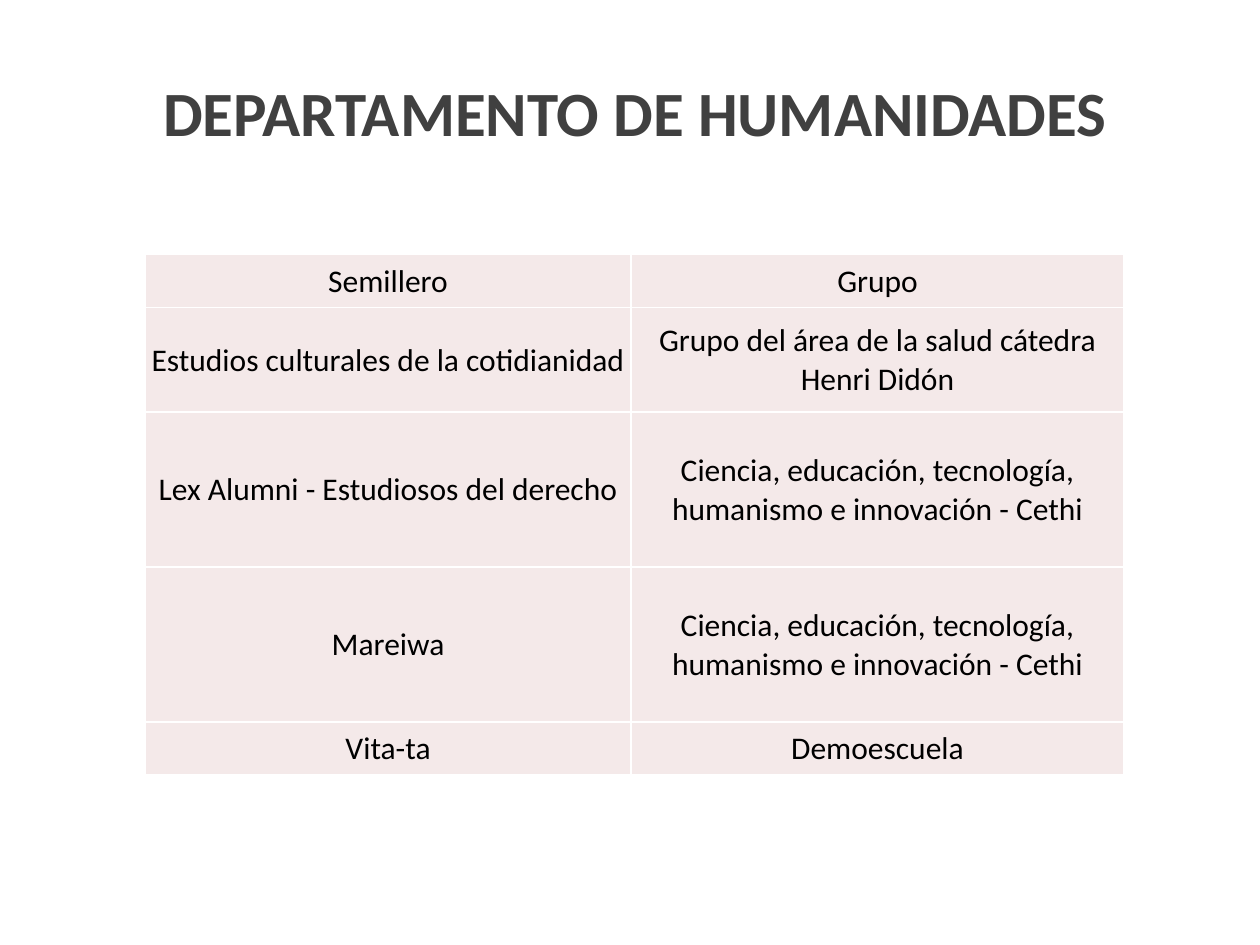
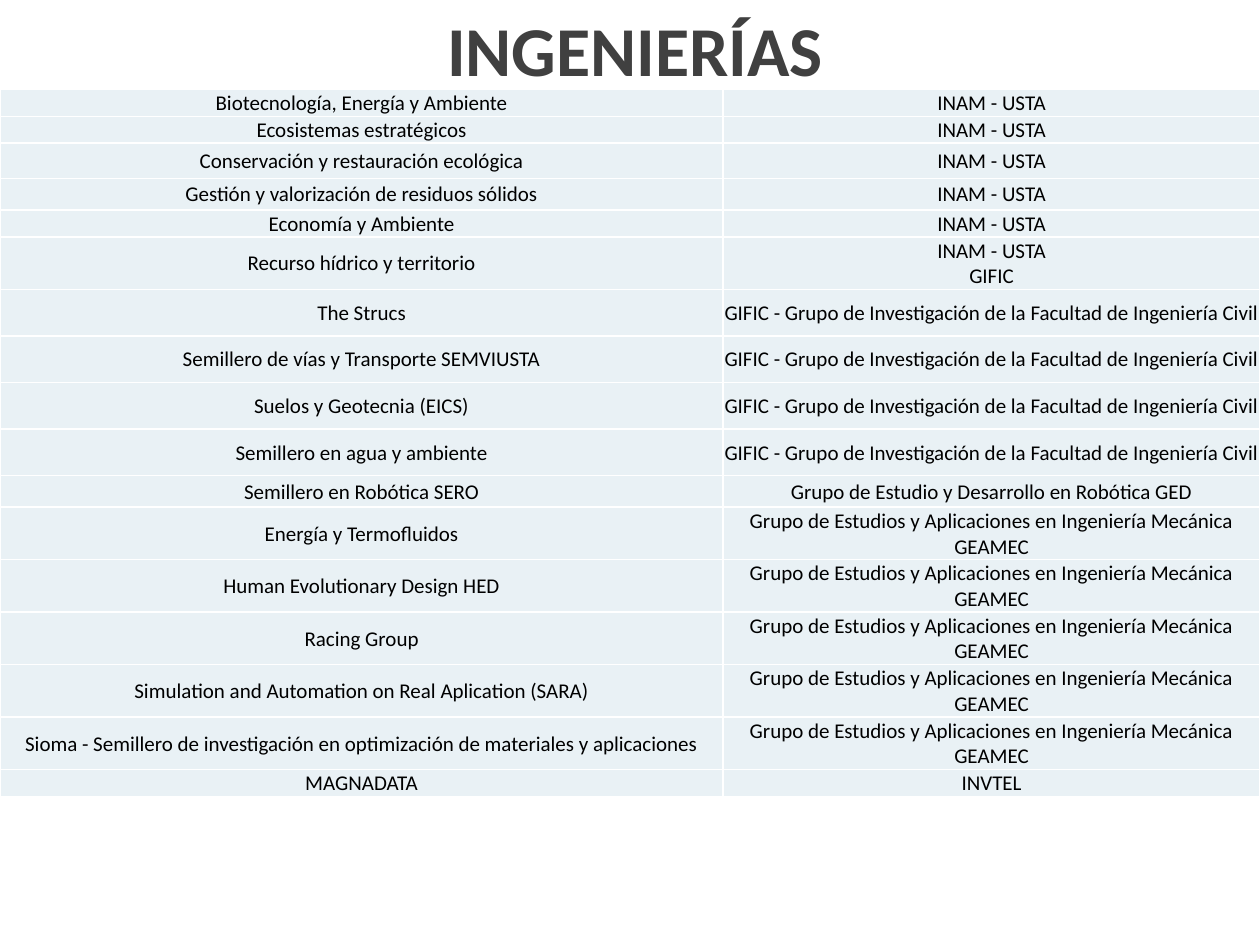
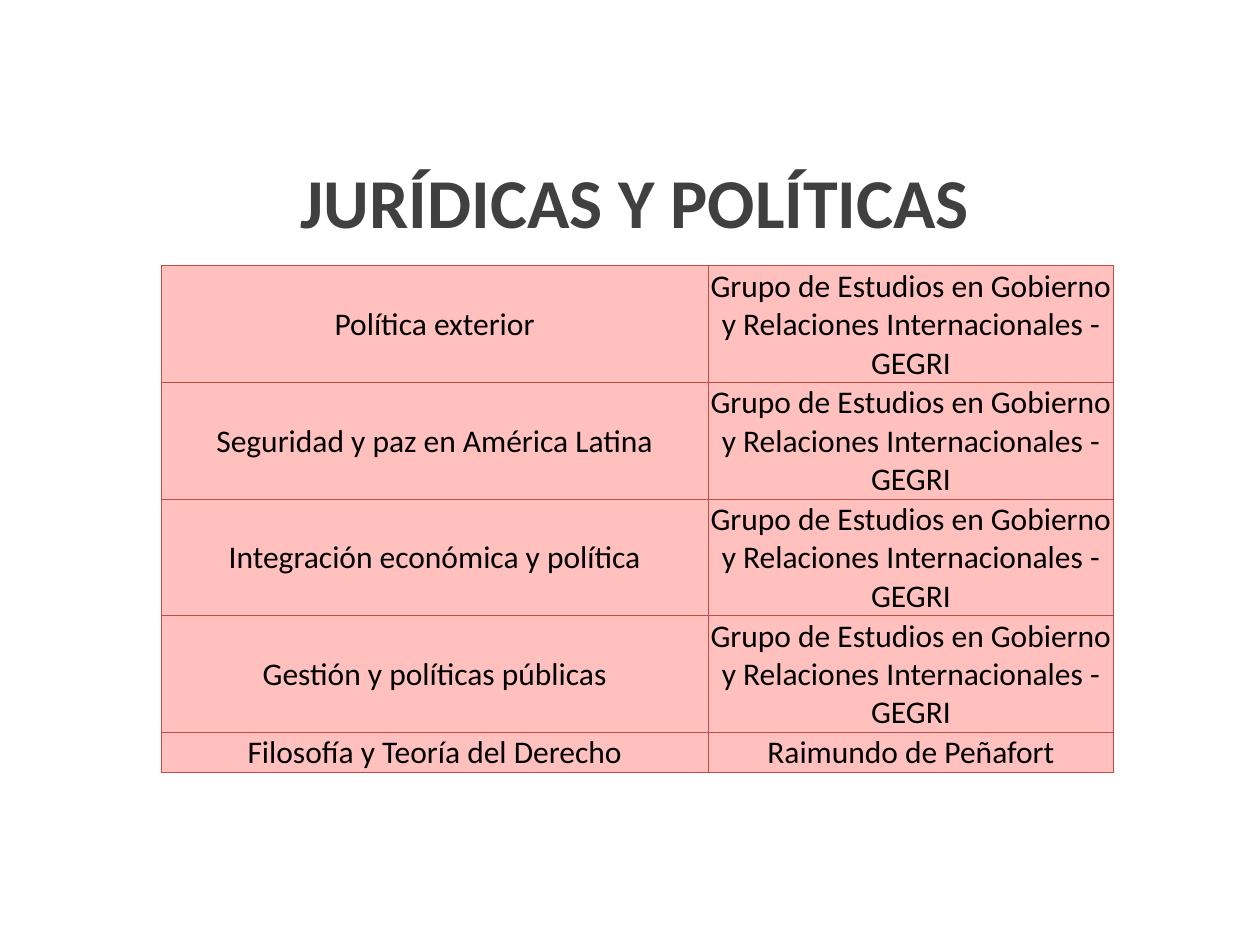
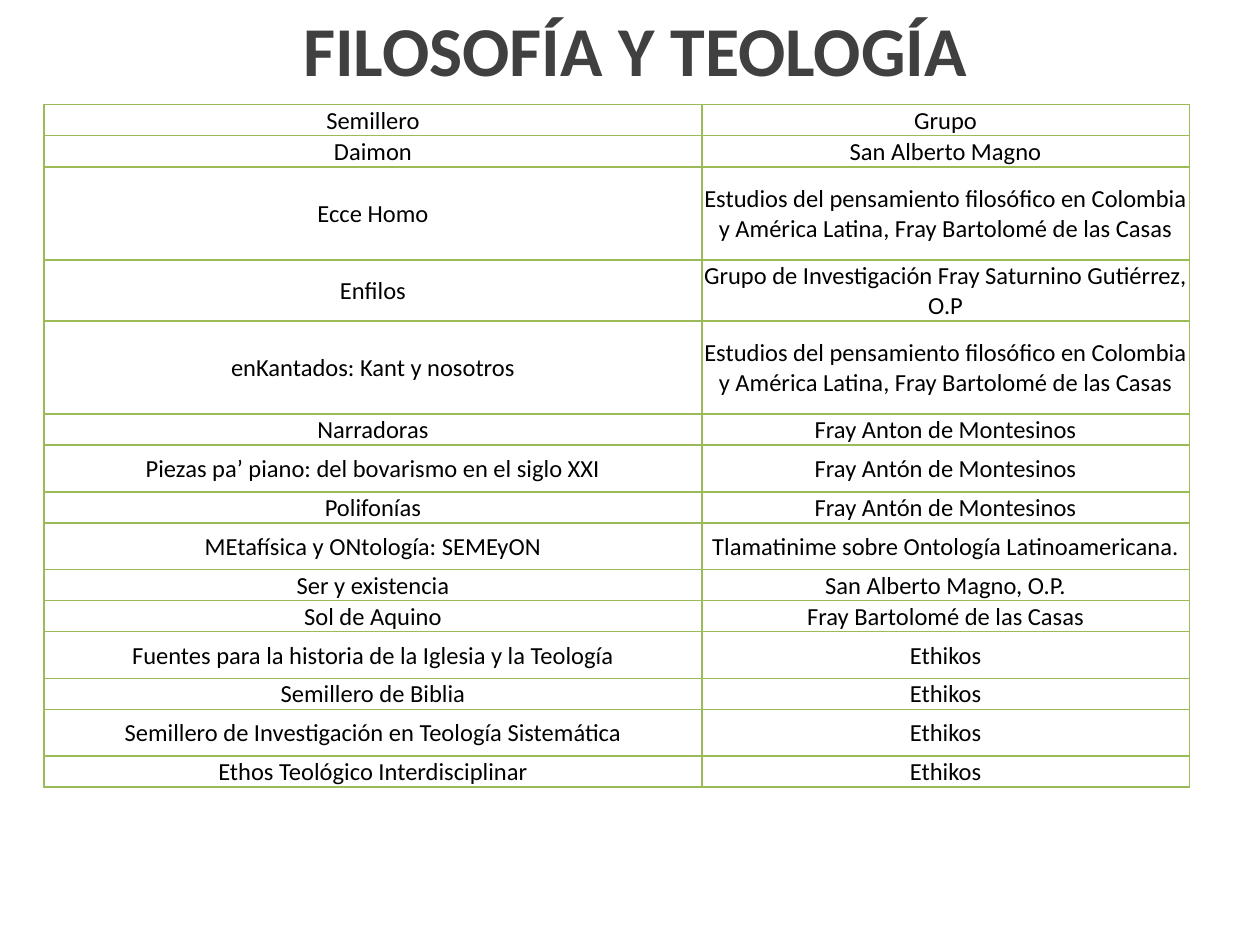
from dataclasses import dataclass
from typing import NamedTuple, Optional

from lxml.etree import SubElement
from pptx import Presentation
from pptx.dml.color import RGBColor
from pptx.enum.text import MSO_ANCHOR as Anchor, MSO_AUTO_SIZE as AutoSize, PP_ALIGN as Align
from pptx.oxml.ns import qn
from pptx.util import Inches, Pt

SLIDE_WIDTH, SLIDE_HEIGHT = Inches(10), Inches(7.5)
GRID_COLUMNS = 100  # square modules; the slide is 100 wide and 75 high
TITLE_ONLY = 5


@dataclass(frozen=True)
class Theme:
    font: str = "Calibri"
    title_color: str = "404040"
    text_color: str = "000000"
    title_size: int = 40
    cell_inset: float = 0.1
    title_left: float = 7.9
    title_width: float = 85
    title_height: float = 14.9


THEME = Theme()


class Row(NamedTuple):
    semillero: str
    grupo: str
    height: float


@dataclass(frozen=True)
class Department:
    """One slide: a title over a table, with lengths in grid modules."""
    title: str
    title_top: float
    left: float
    top: float
    columns: tuple[float, float]
    rows: list[Row]
    text_size: int
    border: str
    border_width: float = 1
    fill: Optional[str] = None
    title_size: int = THEME.title_size


CETHI = "Ciencia, educación, tecnología, humanismo e innovación - Cethi"
INAM = "INAM - USTA"
GIFIC = "GIFIC - Grupo de Investigación de la Facultad de Ingeniería Civil"
GEAMEC = "Grupo de Estudios y Aplicaciones en Ingeniería Mecánica GEAMEC"
GEGRI = "Grupo de Estudios en Gobierno y Relaciones Internacionales - GEGRI"
PENSAMIENTO = ("Estudios del pensamiento filosófico en Colombia y América Latina, "
               "Fray Bartolomé de las Casas")
MONTESINOS = "Fray Antón de Montesinos"
ETHIKOS = "Ethikos"

DEPARTMENTS = [
    Department(
        "DEPARTAMENTO DE HUMANIDADES", 5.3, 11.5, 20.2, (38.6, 39.1),
        [
            Row("Semillero", "Grupo", 4.2),
            Row("Estudios culturales de la cotidianidad",
                "Grupo del área de la salud cátedra Henri Didón", 8.3),
            Row("Lex Alumni - Estudiosos del derecho", CETHI, 12.3),
            Row("Mareiwa", CETHI, 12.3),
            Row("Vita-ta", "Demoescuela", 4.2),
        ],
        text_size=18, border="FFFFFF", fill="F4E9E9", title_size=36),
    Department(
        "INGENIERÍAS", 0, 0, 7.1, (57.4, 42.6),
        [
            Row("Biotecnología, Energía y Ambiente", INAM, 1.9),
            Row("Ecosistemas estratégicos", INAM, 1.9),
            Row("Conservación y restauración ecológica", INAM, 2.8),
            Row("Gestión y valorización de residuos sólidos", INAM, 2.5),
            Row("Economía y Ambiente", INAM, 1.9),
            Row("Recurso hídrico y territorio", f"{INAM}\nGIFIC", 3.6),
            Row("The Strucs", GIFIC, 3.7),
            Row("Semillero de vías y Transporte SEMVIUSTA", GIFIC, 3.7),
            Row("Suelos y Geotecnia (EICS)", GIFIC, 3.7),
            Row("Semillero en agua y ambiente", GIFIC, 3.7),
            Row("Semillero en Robótica SERO",
                "Grupo de Estudio y Desarrollo en Robótica GED", 2.5),
            Row("Energía y Termofluidos", GEAMEC, 3.7),
            Row("Human Evolutionary Design HED", GEAMEC, 3.7),
            Row("Racing Group", GEAMEC, 3.7),
            Row("Simulation and Automation on Real Aplication (SARA)", GEAMEC, 3.7),
            Row("Sioma - Semillero de investigación en optimización de materiales "
                "y aplicaciones", GEAMEC, 3.7),
            Row("MAGNADATA", "INVTEL", 1.9),
        ],
        text_size=12, border="FFFFFF", fill="E9F1F5"),
    Department(
        "JURÍDICAS Y POLÍTICAS", 12.1, 12.8, 21.1, (43.4, 32.2),
        [
            Row("Política exterior", GEGRI, 8.6),
            Row("Seguridad y paz en América Latina", GEGRI, 8.6),
            Row("Integración económica y política", GEGRI, 8.6),
            Row("Gestión y políticas públicas", GEGRI, 8.6),
            Row("Filosofía y Teoría del Derecho", "Raimundo de Peñafort", 3),
        ],
        text_size=18, border="BF4C48", border_width=0.75, fill="FFC0BE"),
    Department(
        "FILOSOFÍA Y TEOLOGÍA", 0, 3.5, 8.3, (52.2, 38.7),
        [
            Row("Semillero", "Grupo", 1.8),
            Row("Daimon", "San Alberto Magno", 1.8),
            Row("Ecce Homo", PENSAMIENTO, 7.4),
            Row("Enfilos", "Grupo de Investigación Fray Saturnino Gutiérrez, O.P", 3.7),
            Row("enKantados: Kant y nosotros", PENSAMIENTO, 7.4),
            Row("Narradoras", "Fray Anton de Montesinos", 1.9),
            Row("Piezas pa’ piano: del bovarismo en el siglo XXI", MONTESINOS, 3.7),
            Row("Polifonías", MONTESINOS, 1.9),
            Row("MEtafísica y ONtología: SEMEyON",
                "Tlamatinime sobre Ontología Latinoamericana.", 3.7),
            Row("Ser y existencia", "San Alberto Magno, O.P.", 1.9),
            Row("Sol de Aquino", "Fray Bartolomé de las Casas", 1.9),
            Row("Fuentes para la historia de la Iglesia y la Teología", ETHIKOS, 3.7),
            Row("Semillero de Biblia", ETHIKOS, 1.9),
            Row("Semillero de Investigación en Teología Sistemática", ETHIKOS, 3.7),
            Row("Ethos Teológico Interdisciplinar", ETHIKOS, 1.9),
        ],
        text_size=14, border="9BBB59"),
]


def modules(count: float) -> int:
    """Turn grid modules into a length."""
    return round(SLIDE_WIDTH * count / GRID_COLUMNS)


def format_text(frame, size: int, color: str, bold: bool = False) -> None:
    for paragraph in frame.paragraphs:
        paragraph.alignment = Align.CENTER
        for run in paragraph.runs:
            run.font.name = THEME.font
            run.font.size = Pt(size)
            run.font.bold = bold
            run.font.color.rgb = RGBColor.from_string(color)


def add_borders(cell, color: str, width: float) -> None:
    properties = cell._tc.get_or_add_tcPr()
    for side in ("lnL", "lnR", "lnT", "lnB"):
        line = SubElement(properties, qn(f"a:{side}"), w=str(Pt(width)))
        SubElement(SubElement(line, qn("a:solidFill")), qn("a:srgbClr"), val=color)


def fill_cell(cell, text: str, department: Department) -> None:
    cell.margin_left = cell.margin_right = cell.margin_top = modules(THEME.cell_inset)
    cell.margin_bottom = 0
    cell.vertical_anchor = Anchor.MIDDLE
    cell.text_frame.text = text
    format_text(cell.text_frame, department.text_size, THEME.text_color)
    add_borders(cell, department.border, department.border_width)
    if department.fill:
        cell.fill.solid()
        cell.fill.fore_color.rgb = RGBColor.from_string(department.fill)
    else:
        cell.fill.background()


def add_title(slide, department: Department) -> None:
    title = slide.shapes.title
    title.left, title.top = modules(THEME.title_left), modules(department.title_top)
    title.width, title.height = modules(THEME.title_width), modules(THEME.title_height)
    frame = title.text_frame
    frame.text = department.title
    frame.auto_size = AutoSize.NONE
    frame.vertical_anchor = Anchor.TOP
    format_text(frame, department.title_size, THEME.title_color, bold=True)


def add_groups_table(slide, department: Department) -> None:
    rows, columns = department.rows, department.columns
    table = slide.shapes.add_table(
        len(rows), len(columns), modules(department.left), modules(department.top),
        modules(sum(columns)), modules(sum(row.height for row in rows))).table
    table.first_row = table.horz_banding = False
    for column, width in zip(table.columns, columns):
        column.width = modules(width)
    for table_row, row in zip(table.rows, rows):
        table_row.height = modules(row.height)
        for cell, text in zip(table_row.cells, (row.semillero, row.grupo)):
            fill_cell(cell, text, department)


def main() -> None:
    deck = Presentation()
    deck.slide_width, deck.slide_height = SLIDE_WIDTH, SLIDE_HEIGHT
    for department in DEPARTMENTS:
        slide = deck.slides.add_slide(deck.slide_layouts[TITLE_ONLY])
        add_title(slide, department)
        add_groups_table(slide, department)
    deck.save("out.pptx")


if __name__ == "__main__":
    main()
